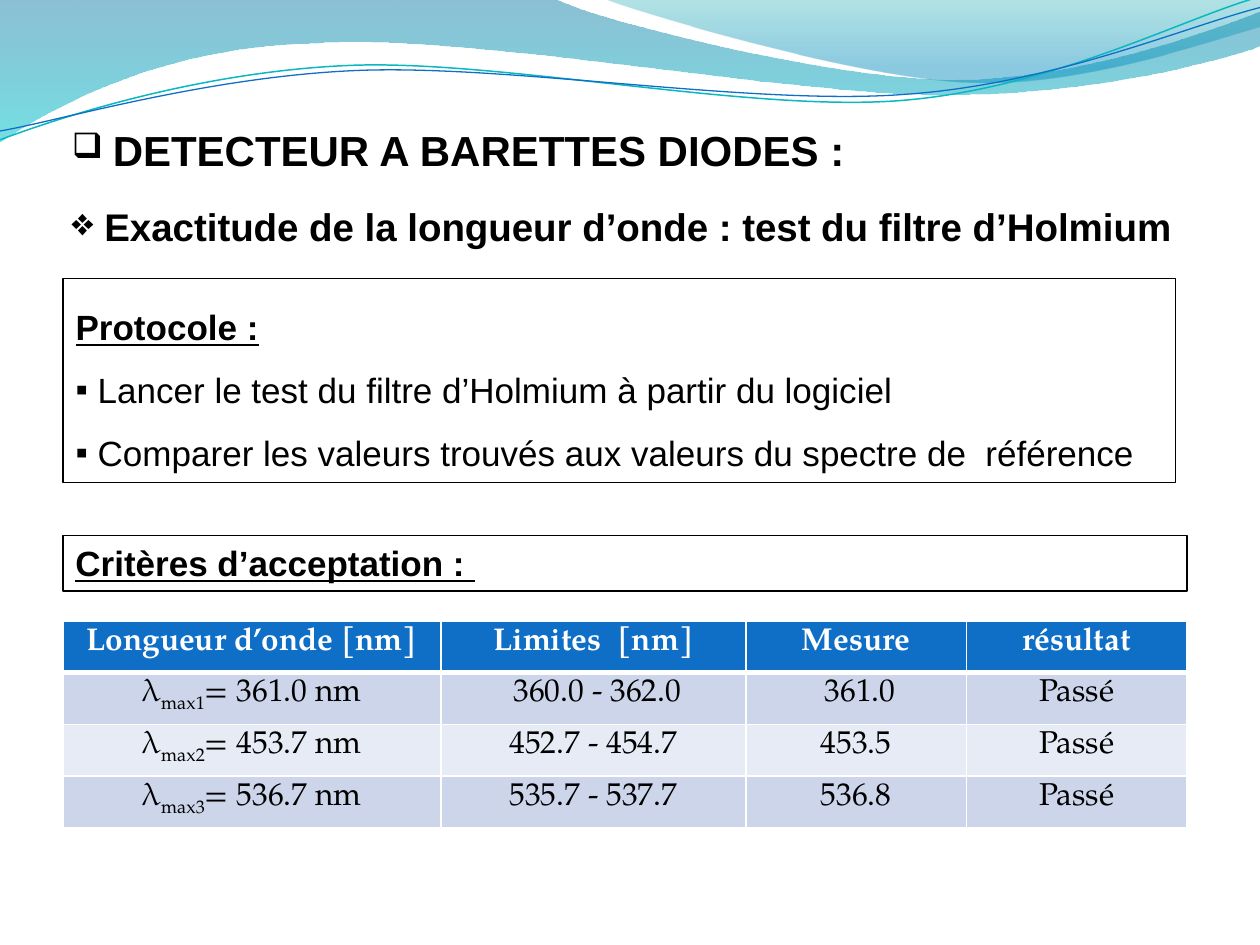
from pptx import Presentation
from pptx.dml.color import RGBColor
from pptx.enum.shapes import MSO_SHAPE as Shape
from pptx.enum.text import MSO_ANCHOR as Anchor, MSO_AUTO_SIZE as Fit, PP_ALIGN as Align
from pptx.oxml.ns import qn
from pptx.util import Inches, Pt
from lxml.etree import SubElement

SANS, SERIF, SIGNS = "Arial", "TeX Gyre Pagella", "OpenSymbol"
BLACK, WHITE, BLUE = "000000", "FFFFFF", "0F6FC6"
BANDS = "CCD5EA", "E7EBF5"
UNIT = 1000  # pen units per inch

TITLE = "DETECTEUR A BARETTES DIODES\u00a0:"
TOPIC = "Exactitude de la longueur d’onde : test du filtre d’Holmium"
PROTOCOL = "Protocole :"
STEPS = [
    " Lancer le test du filtre d’Holmium à partir du logiciel",
    " Comparer les valeurs trouvés aux valeurs du spectre de  référence",
]
CRITERIA = "Critères d’acceptation : "
HEAD = ["Longueur d’onde [nm]", "Limites  [nm]", "Mesure", "résultat"]
ROWS = [
    ("361.0", " 360.0 - 362.0", " 361.0", "Passé"),
    ("453.7", "452.7 - 454.7", "453.5", "Passé"),
    ("536.7", "535.7 - 537.7", "536.8", "Passé"),
]
COLS = [3, 2.42, 1.75, 1.75]
ROW_H = 0.41

# Outlines: a start point, then straight (2 numbers) or cubic (6 numbers) pieces.
# Gradient stops: position, colour, opacity in percent.
WAVES = [
    ([(0, 0), (4.4, -0.01), (4.76, 0.17, 6.64, 0.63, 7.58, 0.63),
      (8.53, 0.63, 9.58, 0.26, 10, 0.09), (10.01, 0.36),
      (9.83, 0.44, 8.7, 0.76, 7.46, 0.75), (6.22, 0.75, 3.82, 0.28, 2.57, 0.34),
      (1.29, 0.36, 0.46, 0.83, -0.01, 1.13)],
     [(0, "0074A1", 45), (1, "00C6CF", 55)]),
    ([(4.79, -0.01), (5.09, 0.11, 6.82, 0.62, 7.69, 0.65),
      (8.56, 0.69, 9.61, 0.32, 10, 0.21), (10, 0)],
     [(0, "00A1A9", 30), (0.8, "008BBF", 45)]),
]
CURVES = [
    ([(0, 1.11), (0.48, 0.93, 1.58, 0.57, 2.77, 0.52),
      (3.95, 0.47, 5.93, 0.89, 7.13, 0.8), (8.33, 0.71, 9.38, 0.15, 9.98, -0.02)],
     "0AB8BF", 0.85),
    ([(0, 1.04), (0.47, 0.96, 1.64, 0.61, 2.83, 0.56),
      (4.03, 0.51, 5.97, 0.84, 7.17, 0.75), (8.36, 0.67, 9.41, 0.21, 10, 0.06)],
     BLUE, 0.75),
]


def color(code):
    return RGBColor.from_string(code)


def outline(pieces, close):
    """Draw the end points as a freeform, then bend its cubic pieces."""
    pieces = [[round(v * UNIT) for v in piece] for piece in pieces]
    ends = [piece[-2:] for piece in pieces]
    pen = slide.shapes.build_freeform(*ends[0], scale=Inches(1) / UNIT)
    pen.add_line_segments(ends[1:], close=close)
    shape = pen.convert_to_shape()
    shape.shadow.inherit = False
    left, top = (min(axis) for axis in zip(*ends))
    for node, piece in zip(list(shape.element.iter(qn("a:lnTo"))), pieces[1:]):
        if len(piece) == 6:
            node.tag = qn("a:cubicBezTo")
            for i in (0, 2):
                spot = node.makeelement(
                    qn("a:pt"), x=str(piece[i] - left), y=str(piece[i + 1] - top))
                node.insert(i // 2, spot)
    return shape


def wave(pieces, stops):
    shape = outline(pieces, True)
    shape.line.fill.background()
    shape.fill.gradient()
    shape.fill.gradient_angle = 270
    for stop, (pos, code, _) in zip(shape.fill.gradient_stops, stops):
        stop.position = pos
        stop.color.rgb = color(code)
    for node, (_, _, alpha) in zip(shape.element.iter(qn("a:srgbClr")), stops):
        SubElement(node, qn("a:alpha"), val=str(alpha * 1000))


def curve(pieces, code, width):
    shape = outline(pieces, False)
    shape.fill.background()
    shape.line.color.rgb = color(code)
    shape.line.width = Pt(width)


def place(shape, x, y, w, h):
    """Set the box of a placeholder and bring it to the front."""
    shape.left, shape.top, shape.width, shape.height = map(Inches, (x, y, w, h))
    shape.element.getparent().append(shape.element)


def setup(shape, anchor=Anchor.TOP):
    frame = shape.text_frame
    frame.word_wrap = True
    frame.auto_size = Fit.NONE
    frame.vertical_anchor = anchor
    return frame


def frame_line(shape):
    shape.fill.background()
    shape.line.color.rgb = color(BLACK)
    shape.line.width = Pt(0.75)


def style(para, align=Align.LEFT, bullet=None, spacing=1, face=SANS):
    para.alignment = align
    para.line_spacing = spacing
    para.space_before = para.space_after = Pt(0)
    props = para._p.get_or_add_pPr()
    props.set("marL", "0")
    props.set("indent", "0")
    if bullet:
        SubElement(props, qn("a:buFont"), typeface=face)
        SubElement(props, qn("a:buChar"), char=bullet)
    else:
        SubElement(props, qn("a:buNone"))


def write(para, text, size, bold=False, under=False, face=SANS, code=BLACK):
    run = para.add_run()
    run.text = text
    font = run.font
    font.size, font.name = Pt(size), face
    font.bold, font.underline = bold, under
    font.color.rgb = color(code)
    return run


def border(cell, **widths):
    props = cell._tc.get_or_add_tcPr()
    for i, side in enumerate("LRTB"):
        line = props.makeelement(qn("a:ln" + side), w=str(Pt(widths.get(side, 1))))
        SubElement(SubElement(line, qn("a:solidFill")), qn("a:srgbClr"), val=WHITE)
        props.insert(i, line)


def fill_cell(cell, parts, back, bold=False, code=BLACK, **widths):
    """Write (text, is subscript) parts into a cell."""
    cell.fill.solid()
    cell.fill.fore_color.rgb = color(back)
    border(cell, **widths)
    para = cell.text_frame.paragraphs[0]
    para.alignment = Align.CENTER
    for text, sub in parts:
        run = write(para, text, 18, bold, face=SERIF, code=code)
        if sub:
            run.font._element.set("baseline", "-25000")


deck = Presentation()
deck.slide_width, deck.slide_height = Inches(10), Inches(7.5)
slide = deck.slides.add_slide(deck.slide_layouts[1])
title, body = slide.placeholders

for item in WAVES:
    wave(*item)
for item in CURVES:
    curve(*item)

place(title, 0.47, 0.94, 6.58, 0.5)
para = setup(title, Anchor.MIDDLE).paragraphs[0]
style(para, bullet="❑", face=SIGNS)
write(para, " ", 20, True)
write(para, TITLE, 24, True)

topic = slide.shapes.add_textbox(*map(Inches, (0.47, 1.56, 9.35, 0.47)))
para = setup(topic, Anchor.MIDDLE).paragraphs[0]
style(para, bullet="❖", face=SIGNS)
write(para, " ", 22)
write(para, TOPIC, 22, True)

size = sum(COLS), ROW_H * (len(ROWS) + 1)
table = slide.shapes.add_table(
    len(ROWS) + 1, len(COLS), *map(Inches, (0.5, 4.93, *size))).table
for col, width in zip(table.columns, COLS):
    col.width = Inches(width)
for row in table.rows:
    row.height = Inches(ROW_H)
for c, text in enumerate(HEAD):
    fill_cell(table.cell(0, c), [(text, False)], BLUE, True, WHITE, B=3)
for r, (peak, *rest) in enumerate(ROWS, 1):
    parts = [[("λ", False), (f"max{r}", True), (f"= {peak} nm", False)]]
    parts += [[(text, False)] for text in rest]
    for c, part in enumerate(parts):
        fill_cell(table.cell(r, c), part, BANDS[(r - 1) % 2], T=3 if r == 1 else 1)

place(body, 0.5, 2.21, 8.83, 1.62)
frame_line(body)
frame = setup(body)
para = frame.paragraphs[0]
style(para, spacing=1.5)
write(para, PROTOCOL, 20, True, True)
for step in STEPS:
    para = frame.add_paragraph()
    style(para, Align.JUSTIFY, "▪", 1.5)
    write(para, step, 20)

box = slide.shapes.add_shape(Shape.RECTANGLE, *map(Inches, (0.5, 4.25, 8.92, 0.44)))
box.shadow.inherit = False
frame_line(box)
para = setup(box).paragraphs[0]
style(para)
write(para, CRITERIA, 20, True, True)

deck.save("out.pptx")
